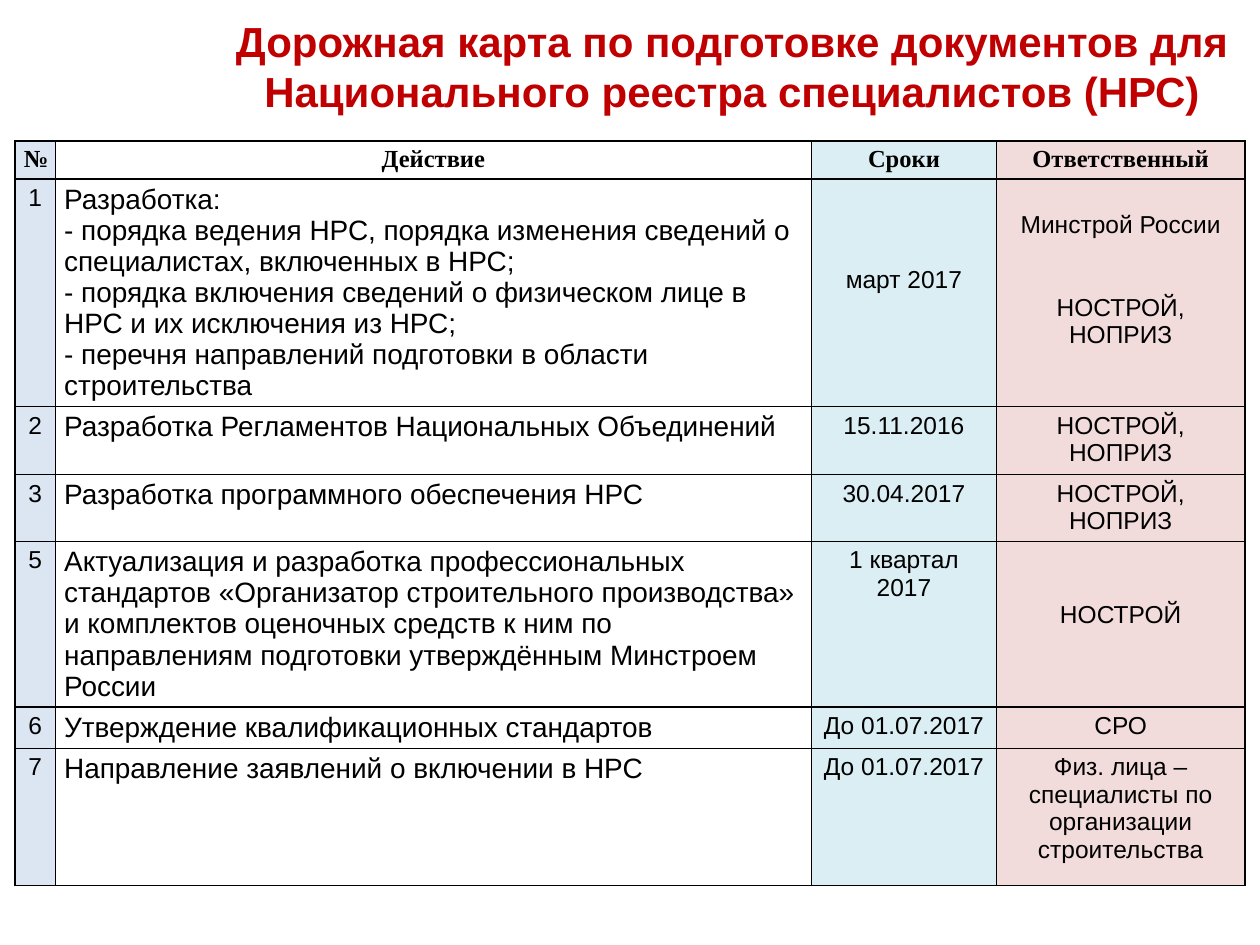
import pptx
import pptx.util
import pptx.dml.color
import pptx.enum.text
import pptx.oxml
import pptx.oxml.ns

Inches, Pt = pptx.util.Inches, pptx.util.Pt
ALIGN = pptx.enum.text.PP_ALIGN
ANCHOR = pptx.enum.text.MSO_ANCHOR

LINE = 15.7  # height in points of one line of 14 pt text
PAD = 0.04   # top and bottom inset of a cell, inches

WIDTHS = [0.32, 6, 1.47, 1.97]
HEIGHTS = [0.3, 1.46, 0.54, 0.53, 0.34, 0.3, 1.09]
FILLS = ["DCE6F2", None, "DBEEF4", "F2DCDB"]
SIZES = [14, 16, 14, 14]

BOTH = "НОСТРОЙ, НОПРИЗ"
ROWS = [
    ["№", "Действие", "Сроки", "Ответственный"],
    ["1",
     "Разработка:\n"
     "- порядка ведения НРС, порядка изменения сведений о специалистах, включенных в НРС;\n"
     "- порядка включения сведений о физическом лице в НРС и их исключения из НРС;\n"
     "- перечня направлений подготовки в области строительства",
     "март 2017", "Минстрой России\n" + BOTH],
    ["2", "Разработка Регламентов Национальных Объединений", "15.11.2016", BOTH],
    ["3", "Разработка программного обеспечения НРС", "30.04.2017", BOTH],
    ["5",
     "Актуализация и разработка профессиональных стандартов «Организатор строительного "
     "производства» и комплектов оценочных средств к ним по направлениям подготовки "
     "утверждённым Минстроем России",
     "1 квартал 2017", "НОСТРОЙ"],
    ["6", "Утверждение квалификационных стандартов", "До 01.07.2017", "СРО"],
    ["7", "Направление заявлений о включении в НРС", "До 01.07.2017",
     "Физ. лица – специалисты по организации строительства"],
]

# Lines of free space above the text and between its paragraphs, by (row, column)
DROPS = {(1, 2): 3, (1, 3): 1, (4, 3): 2}
GAPS = {(1, 3): 2}


def paint(color, code):
    color.rgb = pptx.dml.color.RGBColor.from_string(code)


def write(frame, text, size=14, font="Arial", bold=False, color="000000",
          align=ALIGN.CENTER, gap=0):
    frame.word_wrap = True
    for i, line in enumerate(text.split("\n")):
        para = frame.paragraphs[0] if i == 0 else frame.add_paragraph()
        para.alignment = align
        para.space_before = Pt(gap if i else 0)
        run = para.add_run()
        run.text = line
        run.font.size = Pt(size)
        run.font.name = font
        run.font.bold = bold
        paint(run.font.color, color)


def border(cell, code="000000", width=1):
    props = cell._tc.get_or_add_tcPr()
    for i, side in enumerate(("lnL", "lnR", "lnT", "lnB")):
        props.insert(i, pptx.oxml.parse_xml(
            f'<a:{side} {pptx.oxml.ns.nsdecls("a")} w="{Pt(width)}">'
            f'<a:solidFill><a:srgbClr val="{code}"/></a:solidFill></a:{side}>'))


def style(cell, fill, drop):
    cell.margin_left = cell.margin_right = Inches(0.07)
    cell.margin_top = Inches(PAD) + Pt(drop * LINE)
    cell.margin_bottom = Inches(PAD)
    cell.vertical_anchor = ANCHOR.TOP
    if fill:
        cell.fill.solid()
        paint(cell.fill.fore_color, fill)
    else:
        cell.fill.background()
    border(cell)


def add_title(slide, text):
    title = slide.shapes.title
    title.left, title.top = Inches(0.94), Inches(0.2)
    title.width, title.height = Inches(9.74), Inches(0.64)
    frame = title.text_frame
    frame.auto_size = pptx.enum.text.MSO_AUTO_SIZE.NONE
    frame.vertical_anchor = ANCHOR.MIDDLE
    write(frame, text, size=24, bold=True, color="C00000")


def add_plan(slide):
    table = slide.shapes.add_table(
        len(ROWS), len(WIDTHS), Inches(0.12), Inches(1.12),
        Inches(sum(WIDTHS)), Inches(sum(HEIGHTS))).table
    table.first_row = table.horz_banding = False
    for col, width in zip(table.columns, WIDTHS):
        col.width = Inches(width)
    for row, height in zip(table.rows, HEIGHTS):
        row.height = Inches(height)
    for r, texts in enumerate(ROWS):
        for c, text in enumerate(texts):
            cell = table.cell(r, c)
            style(cell, FILLS[c], DROPS.get((r, c), 0))
            if r == 0:
                write(cell.text_frame, text, font="Times New Roman", bold=True)
            else:
                write(cell.text_frame, text, size=SIZES[c],
                      align=ALIGN.LEFT if c == 1 else ALIGN.CENTER,
                      gap=GAPS.get((r, c), 0) * LINE)


def main():
    deck = pptx.Presentation()
    deck.slide_width, deck.slide_height = Inches(10), Inches(7.5)
    slide = deck.slides.add_slide(deck.slide_layouts[5])
    # Heading
    add_title(slide, "Дорожная карта по подготовке документов для "
                     "Национального реестра специалистов (НРС)")
    # Road map
    add_plan(slide)
    deck.save("out.pptx")


if __name__ == "__main__":
    main()
